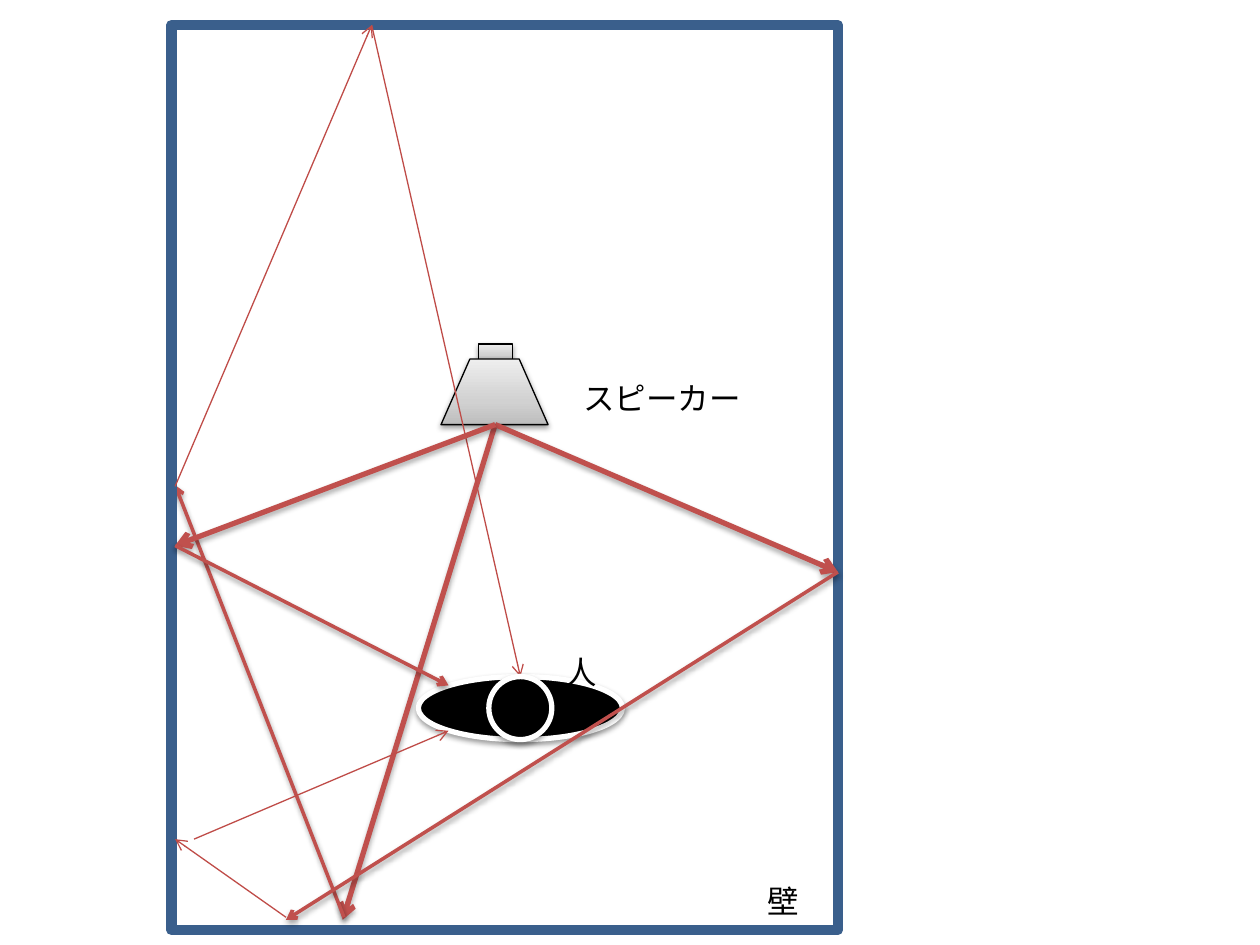
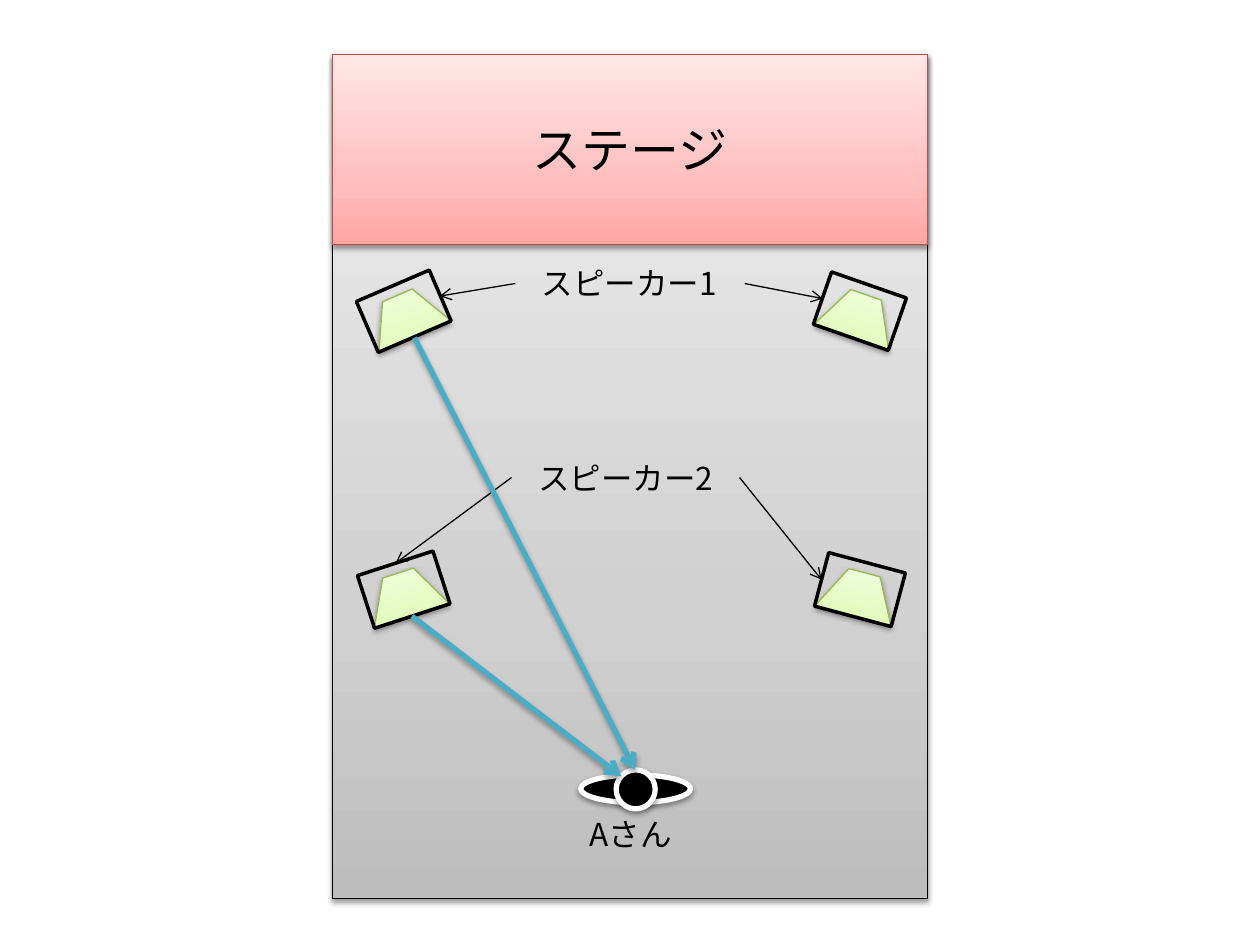
"""Build two diagrams of how sound travels from speakers to a listener."""
from dataclasses import dataclass
from math import radians, sin
from typing import NamedTuple

from lxml import etree
from pptx import Presentation
from pptx.dml.color import RGBColor
from pptx.enum.shapes import MSO_CONNECTOR, MSO_SHAPE
from pptx.enum.text import MSO_ANCHOR, MSO_AUTO_SIZE, PP_ALIGN
from pptx.oxml.ns import qn
from pptx.util import Pt

PX = 9144
RECTANGLE = MSO_SHAPE.RECTANGLE
TRAPEZOID = MSO_SHAPE.TRAPEZOID
OVAL = MSO_SHAPE.OVAL
STRAIGHT = MSO_CONNECTOR.STRAIGHT
LEFT, CENTER, RIGHT = PP_ALIGN.LEFT, PP_ALIGN.CENTER, PP_ALIGN.RIGHT
MIDDLE = MSO_ANCHOR.MIDDLE
FIT_TEXT = MSO_AUTO_SIZE.SHAPE_TO_FIT_TEXT

BLACK = RGBColor(0x00, 0x00, 0x00)
WHITE = RGBColor(0xFF, 0xFF, 0xFF)
WALL_BLUE = RGBColor(0x3A, 0x5F, 0x8C)
RED = RGBColor(0xC0, 0x50, 0x4D)
THIN_RED = RGBColor(0xBF, 0x4C, 0x48)
TEAL = RGBColor(0x4B, 0xAC, 0xC6)
GREEN = RGBColor(0x98, 0xB9, 0x55)
GREYS = (RGBColor(0xBD, 0xBD, 0xBD), RGBColor(0xD1, 0xD1, 0xD1), RGBColor(0xEE, 0xEE, 0xEE))
GREENS = (RGBColor(0xDA, 0xFD, 0xA7), RGBColor(0xE4, 0xFC, 0xC2), RGBColor(0xF5, 0xFF, 0xE7))
PINKS = (RGBColor(0xFF, 0xA6, 0xA5), RGBColor(0xFF, 0xC0, 0xBF), RGBColor(0xFF, 0xE7, 0xE7))
GRADIENT_STOPS = (0, 35, 100)

LATIN_FONT = "Calibri"
JAPANESE_FONT = "Noto Sans CJK JP"


class Area(NamedTuple):
    left: int
    top: int
    width: int
    height: int


class Shadow(NamedTuple):
    opacity: int
    distance: int


SOFT = Shadow(38, 20000)
DEEP = Shadow(35, 23000)


@dataclass(frozen=True)
class Pen:
    color: RGBColor
    width: float
    shadow: Shadow | None = None


@dataclass(frozen=True)
class Style:
    pen: Pen
    fill: RGBColor | tuple[RGBColor, ...] | None = None


class Ray(NamedTuple):
    start: tuple[int, int]
    end: tuple[int, int]
    pen: Pen


class Label(NamedTuple):
    text: str
    area: Area
    align: PP_ALIGN
    font: str


class Speaker(NamedTuple):
    left: int
    top: int
    tilt: float


DIRECT = Pen(RED, 3, DEEP)
REFLECTED = Pen(RED, 2, SOFT)
FADED = Pen(THIN_RED, 0.75)
POINTER = Pen(BLACK, 0.75)
SOUND = Pen(TEAL, 3, DEEP)

WALL = Style(Pen(WALL_BLUE, 6))
GREY_PANEL = Style(Pen(BLACK, 0.75, SOFT), GREYS)
STAGE = Style(Pen(THIN_RED, 0.75, SOFT), PINKS)
CONE = Style(Pen(GREEN, 0.75, SOFT), GREENS)
CABINET = Style(Pen(BLACK, 2))
FIGURE = Style(Pen(WHITE, 3, SOFT), BLACK)

SPEAKER_MOUTH = (393, 337)
RAYS_UNDER_WALL = (
    Ray(SPEAKER_MOUTH, (272, 730), DIRECT),
    Ray((273, 728), (139, 385), REFLECTED),
)
RAYS_BEHIND_PERSON = (
    Ray((139, 386), (295, 20), FADED),
    Ray((295, 20), (413, 537), FADED),
)
RAYS_IN_FRONT = (
    Ray(SPEAKER_MOUTH, (665, 454), DIRECT),
    Ray((665, 454), (227, 730), REFLECTED),
    Ray((227, 728), (139, 666), FADED),
    Ray((154, 666), (356, 580), FADED),
    Ray(SPEAKER_MOUTH, (139, 433), DIRECT),
    Ray((139, 433), (356, 544), REFLECTED),
)
ROOM_LABELS = (
    Label("スピーカー", Area(453, 296, 152, 40), LEFT, LATIN_FONT),
    Label("壁", Area(492, 695, 152, 40), RIGHT, LATIN_FONT),
    Label("人", Area(423, 513, 76, 40), CENTER, LATIN_FONT),
)

HALL_SPEAKERS = (
    Speaker(289, 225, -23.3),
    Speaker(651, 225, 19.2),
    Speaker(289, 446, -18),
    Speaker(651, 446, 14.9),
)
HALL_RAYS = (
    Ray((591, 225), (653, 237), POINTER),
    Ray((409, 225), (349, 235), POINTER),
    Ray((587, 379), (652, 460), POINTER),
    Ray((406, 379), (314, 447), POINTER),
    Ray((329, 268), (504, 611), SOUND),
    Ray((327, 489), (493, 616), SOUND),
)
HALL_LABELS = (
    Label("スピーカー1", Area(409, 205, 181, 40), CENTER, JAPANESE_FONT),
    Label("スピーカー2", Area(406, 359, 181, 40), CENTER, JAPANESE_FONT),
    Label("Aさん", Area(410, 642, 181, 40), CENTER, JAPANESE_FONT),
)


def emu(*lengths: float) -> list[int]:
    """Turn px lengths into EMU."""
    return [round(length * PX) for length in lengths]


def add_color(parent, color: RGBColor):
    """Append a colour element and return it."""
    return etree.SubElement(parent, qn("a:srgbClr"), val=str(color))


def apply_pen(shape, pen: Pen) -> None:
    """Set the outline and the shadow of a shape or connector."""
    shape.line.color.rgb = pen.color
    shape.line.width = Pt(pen.width)
    effects = etree.SubElement(shape._element.spPr, qn("a:effectLst"))
    if pen.shadow:
        outer = etree.SubElement(effects, qn("a:outerShdw"), blurRad="40000",
                                 dist=str(pen.shadow.distance), dir="5400000", rotWithShape="0")
        color = add_color(outer, BLACK)
        etree.SubElement(color, qn("a:alpha"), val=str(pen.shadow.opacity * 1000))


def apply_gradient(shape, colors: tuple[RGBColor, ...]) -> None:
    """Fill a shape with a gradient that runs from bottom to top."""
    shape.fill.gradient()
    shape.fill.gradient_angle = 90
    stops = shape._element.spPr.find(qn("a:gradFill")).find(qn("a:gsLst"))
    for stop in list(stops):
        stops.remove(stop)
    for position, color in zip(GRADIENT_STOPS, colors):
        add_color(etree.SubElement(stops, qn("a:gs"), pos=str(position * 1000)), color)


def add_figure(page, kind: MSO_SHAPE, area: Area, style: Style, tilt: float = 0):
    """Draw one preset shape."""
    shape = page.shapes.add_shape(kind, *emu(*area))
    shape.rotation = tilt
    if style.fill is None:
        shape.fill.background()
    elif isinstance(style.fill, RGBColor):
        shape.fill.solid()
        shape.fill.fore_color.rgb = style.fill
    else:
        apply_gradient(shape, style.fill)
    apply_pen(shape, style.pen)
    return shape


def add_rays(page, rays: tuple[Ray, ...]) -> None:
    """Draw arrows from start to end."""
    for ray in rays:
        connector = page.shapes.add_connector(STRAIGHT, *emu(*ray.start, *ray.end))
        apply_pen(connector, ray.pen)
        line = connector._element.spPr.find(qn("a:ln"))
        etree.SubElement(line, qn("a:tailEnd"), type="arrow")


def write_text(frame, text: str, size: int, align: PP_ALIGN, font: str) -> None:
    """Write one line of black text."""
    frame.word_wrap = True
    para = frame.paragraphs[0]
    para.alignment = align
    span = para.add_run()
    span.text = text
    span.font.size = Pt(size)
    span.font.name = font
    span.font.color.rgb = BLACK


def add_labels(page, labels: tuple[Label, ...]) -> None:
    """Place text boxes."""
    for label in labels:
        frame = page.shapes.add_textbox(*emu(*label.area)).text_frame
        write_text(frame, label.text, 18, label.align, label.font)
        frame.auto_size = FIT_TEXT


def add_person(page, body: Area, head: Area) -> None:
    """Draw a person seen from above."""
    for area in (body, head):
        add_figure(page, OVAL, area, FIGURE)


def add_hall_speaker(page, speaker: Speaker) -> None:
    """Draw a tilted cone in its cabinet."""
    shift = round(-4 * sin(radians(speaker.tilt)))
    cone_area = Area(speaker.left + shift, speaker.top + 8, 63, 36)
    cone = add_figure(page, TRAPEZOID, cone_area, CONE, speaker.tilt)
    cone.adjustments[0] = 0.52
    add_figure(page, RECTANGLE, Area(speaker.left, speaker.top, 63, 44), CABINET, speaker.tilt)


def build_room(page) -> None:
    """Draw the room with reflections off its walls."""
    add_figure(page, RECTANGLE, Area(380, 273, 27, 13), GREY_PANEL)
    horn = add_figure(page, TRAPEZOID, Area(350, 285, 85, 52), GREY_PANEL)
    horn.adjustments[0] = 0.44
    add_rays(page, RAYS_UNDER_WALL)
    add_figure(page, RECTANGLE, Area(136, 20, 529, 718), WALL)
    add_rays(page, RAYS_BEHIND_PERSON)
    add_person(page, Area(332, 537, 162, 50), Area(388, 537, 50, 50))
    add_labels(page, ROOM_LABELS)
    add_rays(page, RAYS_IN_FRONT)


def build_hall(page) -> None:
    """Draw the hall with its stage and four speakers."""
    add_figure(page, RECTANGLE, Area(264, 44, 472, 669), GREY_PANEL)
    for speaker in HALL_SPEAKERS:
        add_hall_speaker(page, speaker)
    add_person(page, Area(461, 615, 87, 22), Area(489, 611, 31, 31))
    stage = add_figure(page, RECTANGLE, Area(264, 43, 472, 151), STAGE)
    stage.text_frame.vertical_anchor = MIDDLE
    write_text(stage.text_frame, "ステージ", 28, CENTER, JAPANESE_FONT)
    add_rays(page, HALL_RAYS)
    add_labels(page, HALL_LABELS)


def main() -> None:
    """Build and save the deck."""
    deck = Presentation()
    deck.slide_width, deck.slide_height = emu(1000, 750)
    blank = deck.slide_layouts[6]
    for build in (build_room, build_hall):
        build(deck.slides.add_slide(blank))
    deck.save("out.pptx")


if __name__ == "__main__":
    main()
